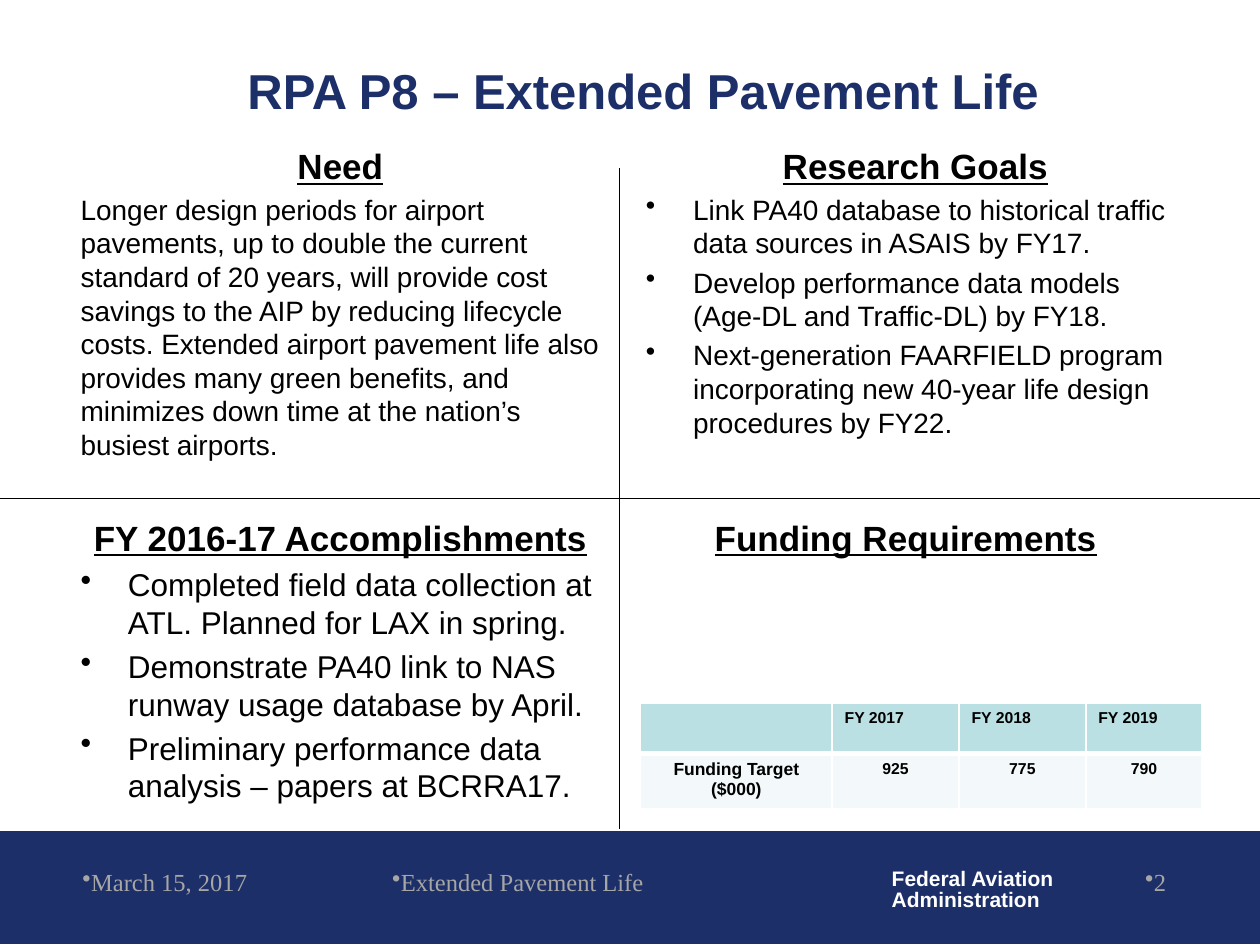
import pptx
import pptx.dml.color
import pptx.enum.shapes
import pptx.enum.text
import pptx.oxml
import pptx.oxml.ns
import pptx.util

Pt = pptx.util.Pt
ALIGN = pptx.enum.text.PP_ALIGN
ANCHOR = pptx.enum.text.MSO_ANCHOR
NAVY, BLACK, WHITE, GREY = "1D2F68", "000000", "FFFFFF", "A6A6A6"
HEADER_FILL, ROW_FILL = "BBE0E3", "F3F9FA"


def colour(value):
    return pptx.dml.color.RGBColor.from_string(value)


def add_xml(parent, markup):
    namespace = pptx.oxml.ns.nsdecls("a")
    parent.append(pptx.oxml.parse_xml(markup.replace(" ", f" {namespace} ", 1)))


def write(frame, text, size=16, ink=BLACK, font="Arial", bold=False, underline=False,
          align=ALIGN.LEFT, bullet=False, indent=0, before=0, spacing=None):
    first = not frame.paragraphs[0].runs
    paragraph = frame.paragraphs[0] if first else frame.add_paragraph()
    if bullet:
        properties = paragraph._p.get_or_add_pPr()
        properties.set("marL", str(Pt(indent)))
        properties.set("indent", str(-Pt(indent)))
        add_xml(properties, '<a:buChar char="•"/>')
    paragraph.alignment = align
    if before and not first:
        paragraph.space_before = Pt(before)
    if spacing:
        paragraph.line_spacing = spacing
    run = paragraph.add_run()
    run.text = text
    run.font.size, run.font.name = Pt(size), font
    run.font.bold, run.font.underline = bold, underline
    run.font.color.rgb = colour(ink)


class Deck:
    """Holds the style and the current slide of the review deck."""

    def __init__(self):
        self.presentation = pptx.Presentation()
        self.presentation.slide_width, self.presentation.slide_height = Pt(720), Pt(540)
        self.slide = self.presentation.slides.add_slide(self.presentation.slide_layouts[5])
        self.shapes = self.slide.shapes

    def title(self, text, left, top, width, height):
        title = self.shapes.title
        title.left, title.top, title.width, title.height = map(Pt, (left, top, width, height))
        title.text_frame.vertical_anchor = ANCHOR.MIDDLE
        write(title.text_frame, text, size=28, ink=NAVY, bold=True, align=ALIGN.CENTER)

    def band(self, left, top, width, height):
        band = self.shapes.add_shape(pptx.enum.shapes.MSO_SHAPE.RECTANGLE,
                                     *map(Pt, (left, top, width, height)))
        band.shadow.inherit = False
        band.fill.solid()
        band.fill.fore_color.rgb = band.line.color.rgb = colour(NAVY)
        band.line.width = Pt(0.75)

    def text_box(self, left, top, width, height, wrap=True):
        frame = self.shapes.add_textbox(*map(Pt, (left, top, width, height))).text_frame
        frame.word_wrap = wrap
        return frame

    def quadrant(self, heading, points, left, top, width, height, size=16, bullet=True):
        frame = self.text_box(left, top, width, height)
        write(frame, heading, size=20, bold=True, underline=True, align=ALIGN.CENTER)
        for point in points:
            write(frame, point, size=size, bullet=bullet, indent=27, before=size * 0.2)

    def footer(self, text, left, width, align):
        frame = self.text_box(left, 491.75, width, 36)
        write(frame, text, size=14, ink=GREY, font="Times New Roman", align=align, bullet=True)

    def divider(self, *ends):
        divider = self.shapes.add_connector(pptx.enum.shapes.MSO_CONNECTOR.STRAIGHT,
                                            *map(Pt, ends))
        divider.line.color.rgb = colour(BLACK)
        divider.line.width = Pt(0.75)
        add_xml(divider._element.spPr, "<a:effectLst />")

    def cell_borders(self, cell, bottom):
        properties = cell._tc.get_or_add_tcPr()
        for place, (side, width) in enumerate(zip("LRTB", (1, 1, 1, bottom))):
            border = pptx.oxml.parse_xml(
                f'<a:ln{side} {pptx.oxml.ns.nsdecls("a")} w="{Pt(width)}"><a:solidFill>'
                f'<a:srgbClr val="{WHITE}"/></a:solidFill></a:ln{side}>')
            properties.insert(place, border)

    def table(self, rows, left, top, widths, heights):
        table = self.shapes.add_table(len(rows), len(widths), Pt(left), Pt(top),
                                      Pt(sum(widths)), Pt(sum(heights))).table
        for column, width in zip(table.columns, widths):
            column.width = Pt(width)
        for r, values in enumerate(rows):
            table.rows[r].height = Pt(heights[r])
            for c, value in enumerate(values):
                cell = table.cell(r, c)
                cell.fill.solid()
                cell.fill.fore_color.rgb = colour(ROW_FILL if r else HEADER_FILL)
                self.cell_borders(cell, bottom=1 if r else 3)
                if value:
                    write(cell.text_frame, value, size=9 if c or not r else 10, bold=True,
                          align=ALIGN.CENTER if r else ALIGN.LEFT)


def main():
    deck = Deck()
    deck.band(0, 475.2, 720, 64)
    agency = deck.text_box(502.5, 493.2, 108, 31.7, wrap=False)
    for line in ("Federal Aviation", "Administration"):
        write(agency, line, size=12, ink=WHITE, bold=True, spacing=0.85)
    deck.title("RPA P8 – Extended Pavement Life", 33.8, 27.4, 667.4, 48.2)

    left, right, upper, lower = 39, 362, 79.2, 291.6
    deck.quadrant("Need", [
        "Longer design periods for airport pavements, up to double the current standard of "
        "20 years, will provide cost savings to the AIP by reducing lifecycle costs. Extended "
        "airport pavement life also provides many green benefits, and minimizes down time at "
        "the nation’s busiest airports."], left, upper, 311, 209, bullet=False)
    deck.quadrant("Research Goals", [
        "Link PA40 database to historical traffic data sources in ASAIS by FY17.",
        "Develop performance data models (Age-DL and Traffic-DL) by FY18.",
        "Next-generation FAARFIELD program incorporating new 40-year life design "
        "procedures by FY22."], right, upper, 322, 209)
    deck.quadrant("FY 2016-17 Accomplishments", [
        "Completed field data collection at ATL. Planned for LAX in spring.",
        "Demonstrate PA40 link to NAS runway usage database by April.",
        "Preliminary performance data analysis – papers at BCRRA17."],
        left, lower, 311, 168, size=18)
    deck.quadrant("Funding Requirements", [], right, lower, 311, 168)
    deck.divider(354, 96, 354, 474)
    deck.divider(0, 285, 720, 285)
    deck.table([["", "FY 2017", "FY 2018", "FY 2019"],
                ["Funding Target ($000)", "925", "775", "790"]],
               366, 401.8, [109.5, 72.5, 72.5, 66.5], [28.8, 31])

    deck.footer("March 15, 2017", 40, 137, ALIGN.LEFT)
    deck.footer("Extended Pavement Life", 182, 228, ALIGN.CENTER)
    deck.footer("2", 523.5, 150, ALIGN.RIGHT)
    deck.presentation.save("out.pptx")


if __name__ == "__main__":
    main()
